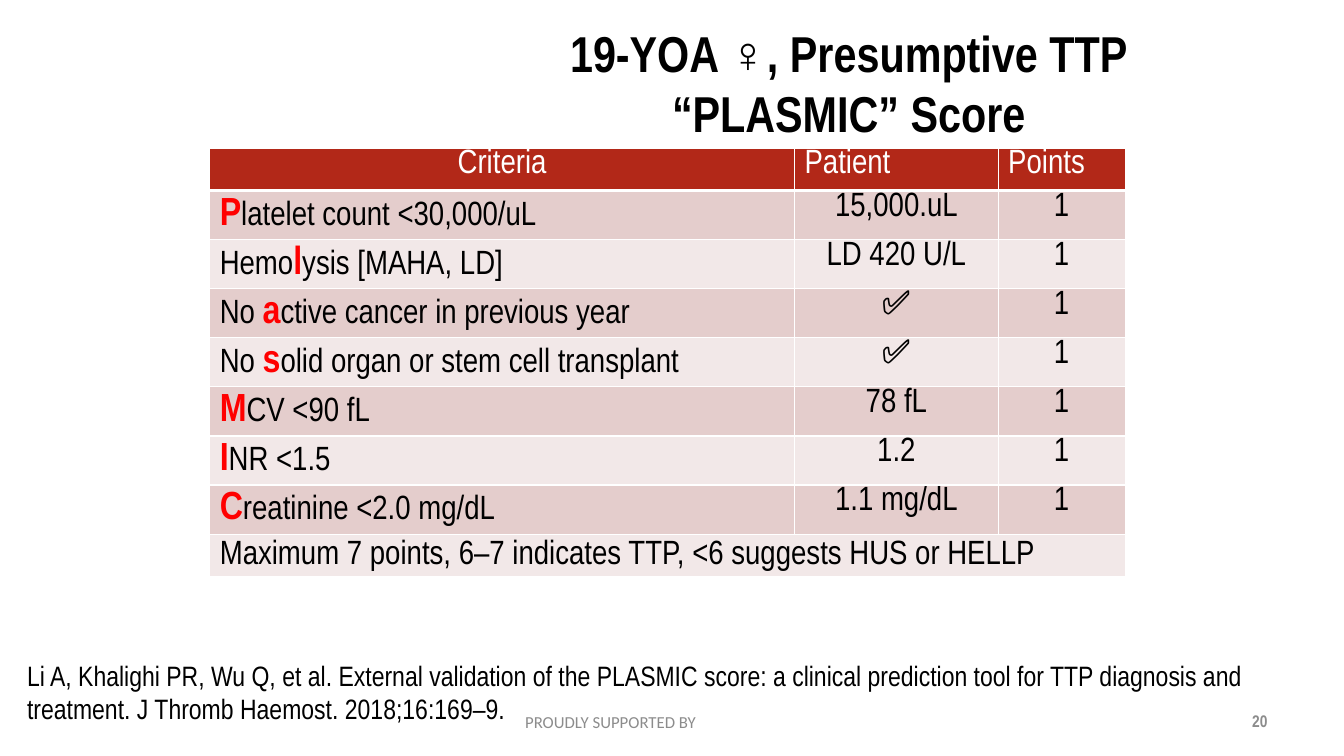
from lxml import etree
from pptx import Presentation
from pptx import util as u
from pptx.dml.color import RGBColor
from pptx.enum import text
from pptx.oxml.ns import qn

COLORS = {
    "black": "000000", "white": "FFFFFF", "grey": "8C8C8C", "red": "FF0000",
    "header": "B22818", "dark band": "E4CDCC", "light band": "F2E8E8",
}
FONT = "Arial Narrow"
LEFT, CENTER, RIGHT = text.PP_ALIGN.LEFT, text.PP_ALIGN.CENTER, text.PP_ALIGN.RIGHT
TOP, MIDDLE = text.MSO_ANCHOR.TOP, text.MSO_ANCHOR.MIDDLE

COLUMN_WIDTHS = (5.8, 2.02, 1.26)
HEADINGS = ("Criteria", "Patient", "Points")
# Text before the highlighted letter, the letter, the text after it, patient value
CRITERIA = (
    ("", "P", "latelet count <30,000/uL", "15,000.uL"),
    ("Hemo", "l", "ysis [MAHA, LD]", "LD 420 U/L"),
    ("No ", "a", "ctive cancer in previous year", "✅"),
    ("No ", "s", "olid organ or stem cell transplant", "✅"),
    ("", "M", "CV <90 fL", "78 fL"),
    ("", "I", "NR <1.5", "1.2"),
    ("", "C", "reatinine <2.0 mg/dL", "1.1 mg/dL"),
)
SUMMARY = "Maximum 7 points, 6–7 indicates TTP, <6 suggests HUS or HELLP"
CITATION = ("Li A, Khalighi PR, Wu Q, et al. External validation of the PLASMIC score: "
            "a clinical prediction tool for TTP diagnosis and treatment. "
            "J Thromb Haemost. 2018;16:169–9.")


def style_font(font, size, color, bold=False, name=FONT):
    font.size = u.Pt(size)
    font.name = name
    font.bold = bold
    font.color.rgb = RGBColor.from_string(COLORS[color])


def add_text(slide, box, content, size, color="black", align=LEFT, anchor=MIDDLE,
             bold=False, name=FONT):
    shape = slide.shapes.add_textbox(*(u.Inches(length) for length in box))
    frame = shape.text_frame
    frame.word_wrap = True
    frame.vertical_anchor = anchor
    paragraph = frame.paragraphs[0]
    paragraph.text = content
    paragraph.alignment = align
    style_font(paragraph.font, size, color, bold, name)


def set_borders(cell, bottom):
    """Draw white cell borders, with the bottom one at its own width in points."""
    properties = cell._tc.get_or_add_tcPr()
    widths = (("a:lnL", 1), ("a:lnR", 1), ("a:lnT", 1), ("a:lnB", bottom))
    for index, (tag, width) in enumerate(widths):
        line = etree.Element(qn(tag), w=str(u.Pt(width)))
        fill = etree.SubElement(line, qn("a:solidFill"))
        etree.SubElement(fill, qn("a:srgbClr"), val=COLORS["white"])
        properties.insert(index, line)


def fill_cell(cell, parts, fill, color="black", align=LEFT, anchor=TOP, bottom=1):
    """Write the parts as runs; with three parts the middle one is highlighted."""
    cell.fill.solid()
    cell.fill.fore_color.rgb = RGBColor.from_string(COLORS[fill])
    set_borders(cell, bottom)
    cell.margin_top = cell.margin_bottom = u.Inches(0.01)
    cell.vertical_anchor = anchor
    paragraph = cell.text_frame.paragraphs[0]
    paragraph.alignment = align
    style_font(paragraph.font, 24, color)
    for index, part in enumerate(parts):
        if part:
            run = paragraph.add_run()
            run.text = part
            if index == 1:
                style_font(run.font, 28, "red", bold=True)
            else:
                style_font(run.font, 24, color)


def add_score_table(slide):
    heights = [0.41] + [0.46] * len(CRITERIA) + [0.41]
    table = slide.shapes.add_table(
        len(heights), len(COLUMN_WIDTHS), u.Inches(2.08), u.Inches(1.47),
        u.Inches(sum(COLUMN_WIDTHS)), u.Inches(sum(heights))).table
    for column, width in zip(table.columns, COLUMN_WIDTHS):
        column.width = u.Inches(width)
    for row, height in zip(table.rows, heights):
        row.height = u.Inches(height)

    for column, heading in enumerate(HEADINGS):
        fill_cell(table.cell(0, column), [heading], "header", "white",
                  LEFT if column else CENTER, bottom=3)
    for row, (*criterion, value) in enumerate(CRITERIA, start=1):
        band = "dark band" if row % 2 else "light band"
        fill_cell(table.cell(row, 0), criterion, band, anchor=MIDDLE)
        fill_cell(table.cell(row, 1), [value], band, align=CENTER)
        fill_cell(table.cell(row, 2), ["1"], band, align=CENTER)

    last = len(heights) - 1
    table.cell(last, 0).merge(table.cell(last, 2))
    fill_cell(table.cell(last, 0), [SUMMARY], "light band", anchor=MIDDLE)


def main():
    presentation = Presentation()
    presentation.slide_width = u.Inches(13.33)
    presentation.slide_height = u.Inches(7.5)
    slide = presentation.slides.add_slide(presentation.slide_layouts[6])

    add_text(slide, (5.11, 6.96, 3.11, 0.4), "PROUDLY SUPPORTED BY", 12, "grey",
             name="Calibri")
    add_text(slide, (5.17, 0.15, 6.5, 1.33),
             "19-YOA ♀, Presumptive TTP\v“PLASMIC” Score", 36, align=CENTER, bold=True)
    add_score_table(slide)
    add_text(slide, (0.17, 6.48, 12.83, 0.77), CITATION, 20, anchor=TOP)
    add_text(slide, (9.56, 6.95, 3.11, 0.4), "20", 12, "grey", RIGHT, bold=True)

    presentation.save("out.pptx")


if __name__ == "__main__":
    main()
